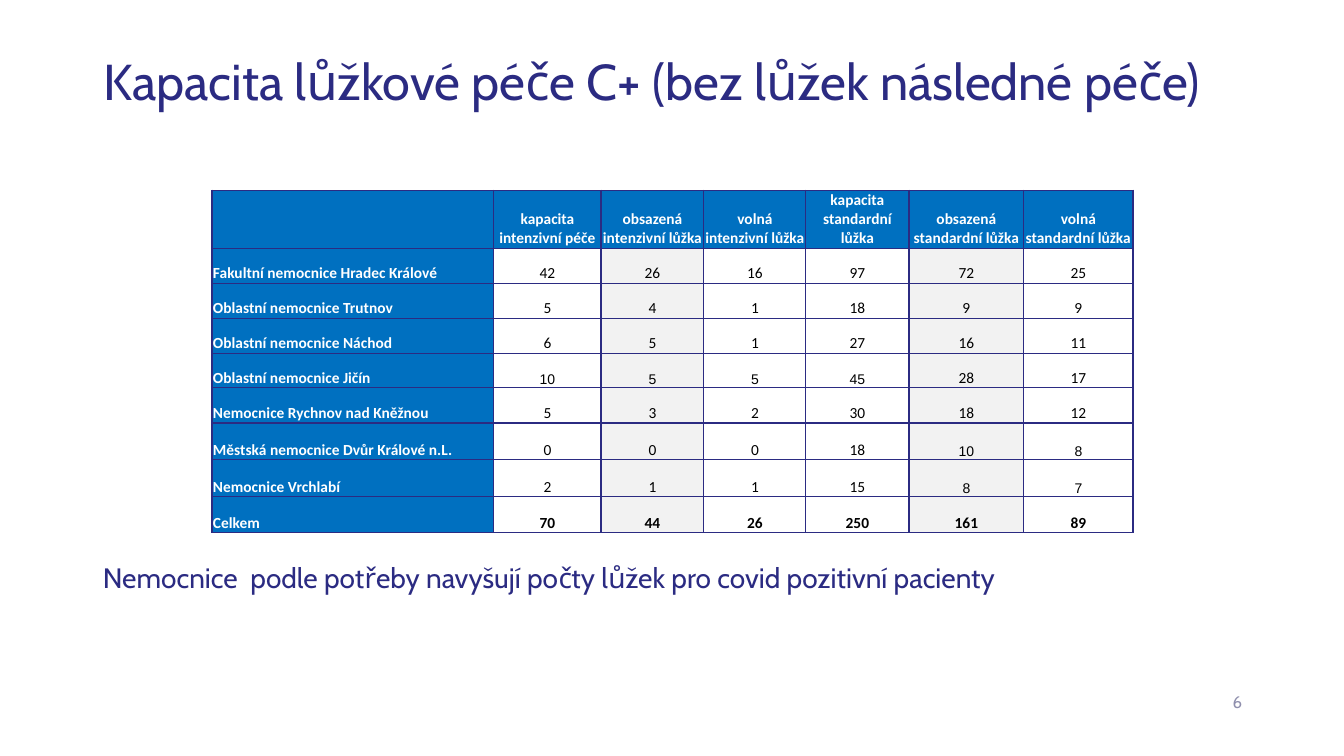
from dataclasses import dataclass

from lxml.etree import SubElement
from pptx import Presentation
from pptx.dml.color import RGBColor as RGB
from pptx.enum.text import MSO_ANCHOR as Anchor, MSO_AUTO_SIZE as AutoSize, PP_ALIGN as Align
from pptx.oxml.ns import qn
from pptx.util import Pt

TITLE = "Kapacita lůžkové péče C+ (bez lůžek následné péče)"
NOTE = "Nemocnice  podle potřeby navyšují počty lůžek pro covid pozitivní pacienty"
PAGE = "6"
ROWS = [
    ("", "kapacita intenzivní péče", "obsazená intenzivní lůžka", "volná intenzivní lůžka",
     "kapacita standardní lůžka", "obsazená standardní lůžka", "volná standardní lůžka"),
    ("Fakultní nemocnice Hradec Králové", 42, 26, 16, 97, 72, 25),
    ("Oblastní nemocnice Trutnov", 5, 4, 1, 18, 9, 9),
    ("Oblastní nemocnice Náchod", 6, 5, 1, 27, 16, 11),
    ("Oblastní nemocnice Jičín", 10, 5, 5, 45, 28, 17),
    ("Nemocnice Rychnov nad Kněžnou", 5, 3, 2, 30, 18, 12),
    ("Městská nemocnice Dvůr Králové n.L.", 0, 0, 0, 18, 10, 8),
    ("Nemocnice Vrchlabí", 2, 1, 1, 15, 8, 7),
    ("Celkem", 70, 44, 26, 250, 161, 89),
]
TOTAL = len(ROWS) - 1

# Lengths in px
SLIDE = (1344, 756)
TITLE_BOX = (93, 41, 1159, 75)
NOTE_BOX = (93, 558, 1159, 42)
PAGE_BOX = (1137, 682, 115, 40)
TABLE_AT = (212, 190)
COL_W = (282, 107, 103, 102, 103, 115, 109)
ROW_H = (58,) + (35,) * 5 + (37, 37, 36)
OCCUPIED = (2, 5)           # shaded columns
THICK_X = (0, 2, 5, 7)      # column edges drawn heavier
THICK_Y = (6,)              # row edges drawn heavier
ARIAL = {(4, 1), (4, 2), (4, 3), (4, 4), (6, 5), (6, 6), (7, 5), (7, 6)}


@dataclass(frozen=True)
class Theme:
    navy: str = "2B2B82"
    muted: str = "8F8FAD"
    blue: str = "0070C0"
    shade: str = "F2F2F2"
    white: str = "FFFFFF"
    black: str = "000000"
    font: str = "Cabin"
    title: int = 36
    note: int = 20
    page: int = 12
    cell: int = 11
    small: int = 10
    thin: float = 0.75
    thick: float = 1.5


T = Theme()


def px(n):
    return round(n * 12192000 / SLIDE[0])


def write(p, text, size, color, name=T.font, bold=False, **layout):
    r = p.add_run()
    r.text = str(text)
    for key, value in dict(size=Pt(size), name=name, bold=bold).items():
        setattr(r.font, key, value)
    r.font.color.rgb = RGB.from_string(color)
    for key, value in layout.items():
        setattr(p, key, value)


def frame(sp, anchor):
    tf = sp.text_frame
    for key, value in dict(word_wrap=True, auto_size=AutoSize.NONE,
                           vertical_anchor=anchor).items():
        setattr(tf, key, value)
    return tf.paragraphs[0]


def add_text(s, box, *args, **layout):
    sp = s.shapes.add_textbox(*map(px, box))
    write(frame(sp, Anchor.MIDDLE), *args, **layout)


def add_borders(cell, row, col):
    tc_pr = cell._tc.get_or_add_tcPr()
    edges = (("L", col in THICK_X), ("R", col + 1 in THICK_X),
             ("T", row in THICK_Y), ("B", row + 1 in THICK_Y))
    for i, (side, heavy) in enumerate(edges):
        ln = SubElement(tc_pr, qn("a:ln" + side), w=str(Pt(T.thick if heavy else T.thin)))
        SubElement(SubElement(ln, qn("a:solidFill")), qn("a:srgbClr"), val=T.navy)
        tc_pr.insert(i, ln)  # borders come before the fill


def fill_cell(cell, row, col, value):
    label = row == 0 or col == 0
    fmt = dict(margin_left=px(1), margin_right=px(1), margin_top=px(1), margin_bottom=0,
               vertical_anchor=Anchor.BOTTOM)
    for key, attr in fmt.items():
        setattr(cell, key, attr)
    cell.fill.solid()
    cell.fill.fore_color.rgb = RGB.from_string(
        T.blue if label else T.shade if col in OCCUPIED else T.white)
    add_borders(cell, row, col)
    if value != "":
        arial = (row, col) in ARIAL
        write(cell.text_frame.paragraphs[0], value, T.small if arial else T.cell,
              T.white if label else T.black, "Arial" if arial else "Calibri",
              label or row == TOTAL, alignment=Align.CENTER if col else Align.LEFT)


def add_capacity_table(s):
    size = (sum(COL_W), sum(ROW_H))
    table = s.shapes.add_table(len(ROWS), len(COL_W), *map(px, TABLE_AT + size)).table
    table.first_row = table.horz_banding = False
    for column, w in zip(table.columns, COL_W):
        column.width = px(w)
    for row, h in zip(table.rows, ROW_H):
        row.height = px(h)
    for i, values in enumerate(ROWS):
        for j, value in enumerate(values):
            fill_cell(table.cell(i, j), i, j, value)


def main():
    prs = Presentation()
    prs.slide_width, prs.slide_height = map(px, SLIDE)
    s = prs.slides.add_slide(prs.slide_layouts[5])
    title = s.shapes.title
    title.left, title.top, title.width, title.height = map(px, TITLE_BOX)
    write(frame(title, Anchor.BOTTOM), TITLE, T.title, T.navy,
          alignment=Align.LEFT, line_spacing=0.9)
    add_text(s, PAGE_BOX, PAGE, T.page, T.muted, alignment=Align.RIGHT)
    add_text(s, NOTE_BOX, NOTE, T.note, T.navy, alignment=Align.JUSTIFY, line_spacing=0.9)
    add_capacity_table(s)
    prs.save("out.pptx")


if __name__ == "__main__":
    main()
